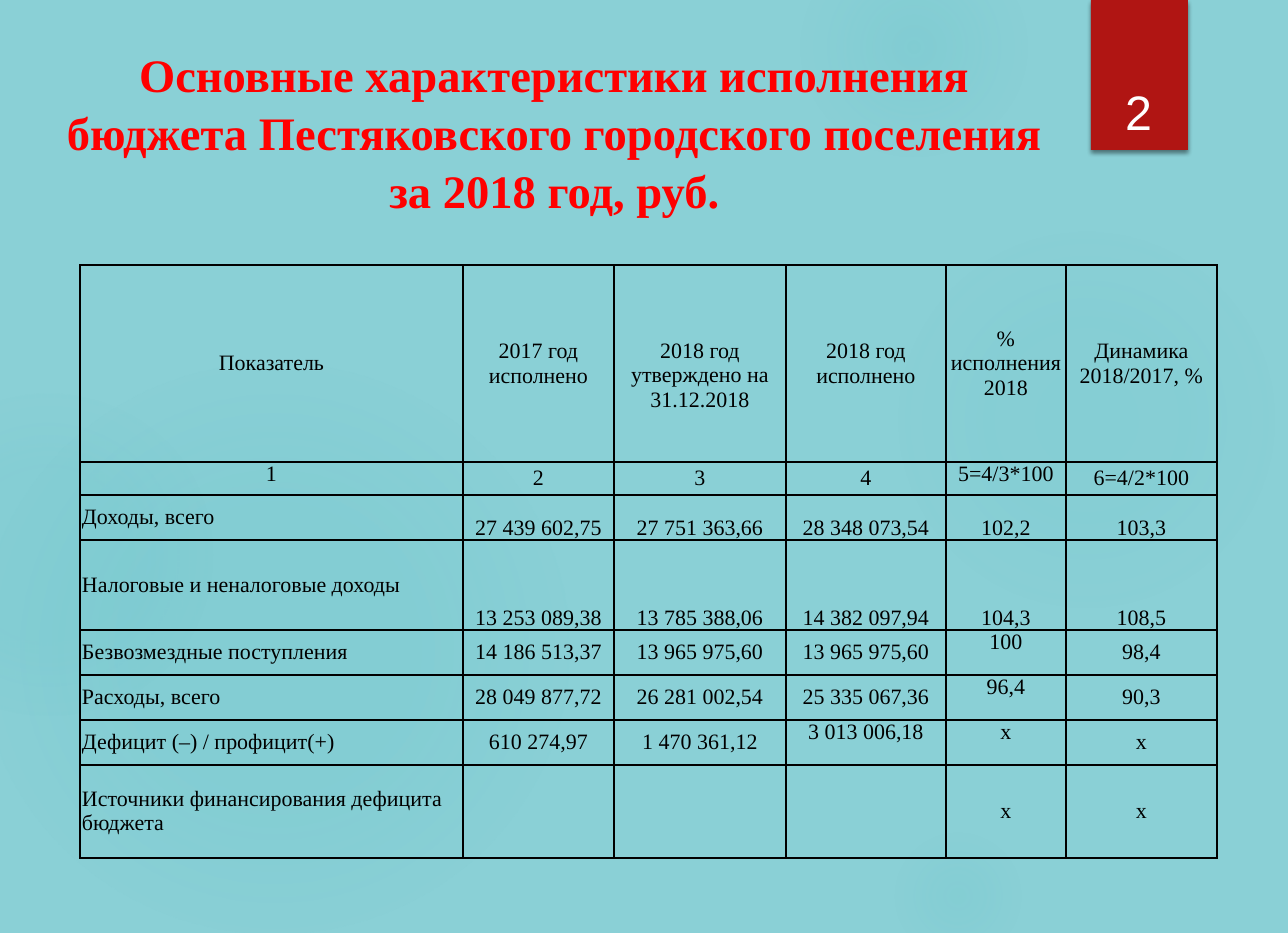
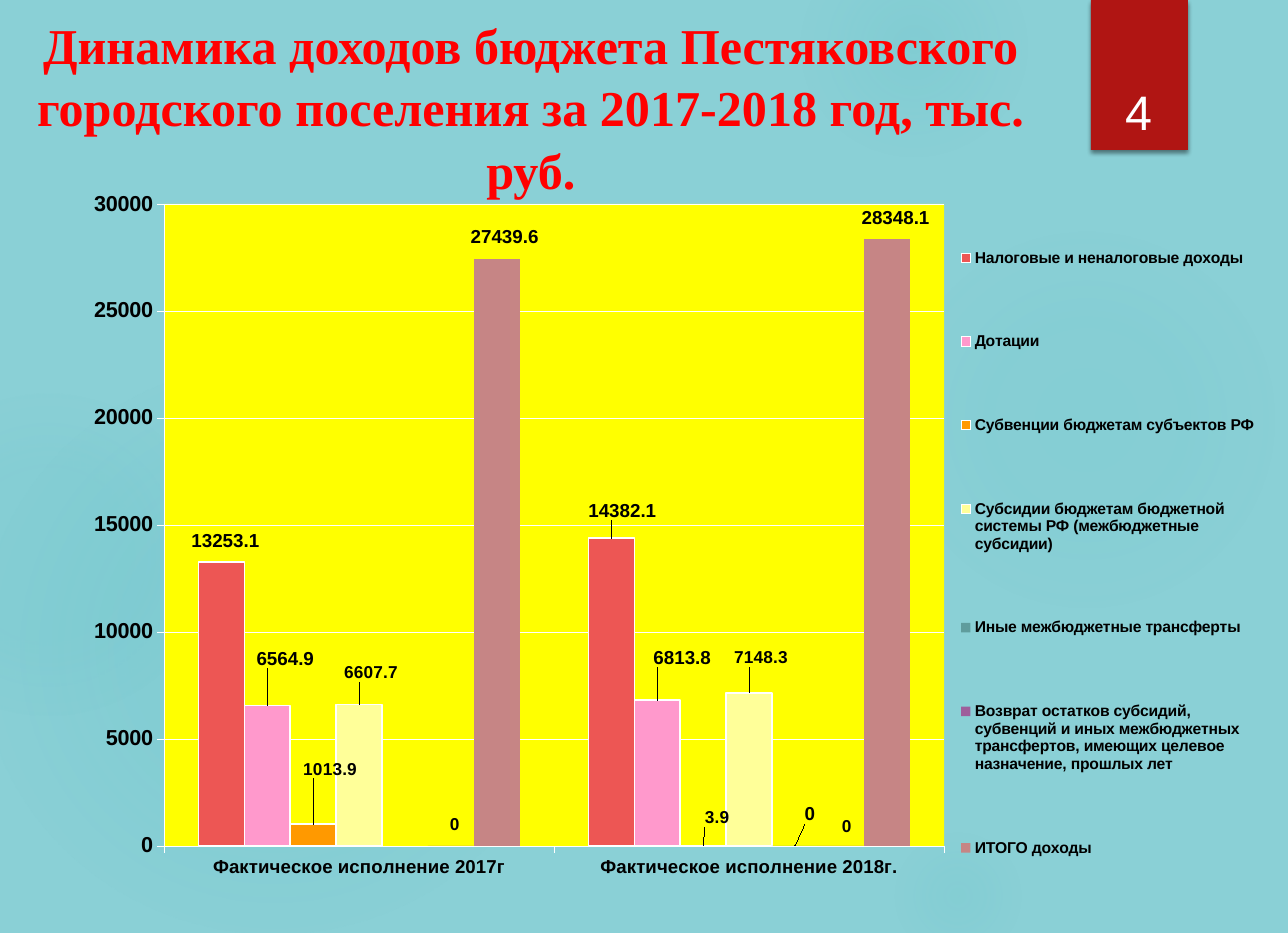
from dataclasses import dataclass

from lxml import etree
from pptx import Presentation
from pptx.chart.data import CategoryChartData
from pptx.dml.color import RGBColor
from pptx.enum.chart import XL_CHART_TYPE, XL_LABEL_POSITION, XL_LEGEND_POSITION, XL_TICK_MARK
from pptx.enum.shapes import MSO_SHAPE
from pptx.enum.text import MSO_ANCHOR, PP_ALIGN
from pptx.oxml import parse_xml
from pptx.oxml.ns import nsdecls, qn
from pptx.util import Emu, Pt

EMU_PER_PX = 8106
PAGE_WIDTH, PAGE_HEIGHT = 1288, 933
LEFT, CENTER = PP_ALIGN.LEFT, PP_ALIGN.CENTER
ANCHORS = {"t": MSO_ANCHOR.TOP, "m": MSO_ANCHOR.MIDDLE, "b": MSO_ANCHOR.BOTTOM}
OVAL, RECTANGLE = MSO_SHAPE.OVAL, MSO_SHAPE.RECTANGLE
COLUMN_CHART = XL_CHART_TYPE.COLUMN_CLUSTERED
OUTSIDE_END = XL_LABEL_POSITION.OUTSIDE_END
LEGEND_RIGHT = XL_LEGEND_POSITION.RIGHT
TICK_OUTSIDE = XL_TICK_MARK.OUTSIDE


@dataclass(frozen=True)
class Theme:
    background: str = "8AD0D6"
    glow: str = "50B9C1"
    band: str = "B01513"
    title: str = "FF0000"
    ink: str = "000000"
    white: str = "FFFFFF"
    plot: str = "FFFF00"
    serif: str = "Times New Roman"
    sans: str = "Arial"
    number_size: float = 30.9
    table_size: float = 14
    value_axis_size: float = 13.8
    category_axis_size: float = 11.9
    legend_size: float = 10
    thin_line: float = 0.25
    bar_line: float = 0.98
    border: float = 1


THEME = Theme()

GLOWS = [
    ((888, 228, 397, 384), ((0, 7), (36, 6), (69, 0))),
    ((801, -62, 226, 218), ((0, 14), (36, 7), (73, 0))),
    ((888, 829, 140, 134), ((0, 9), (36, 5), (66, 0))),
    ((-21, 363, 590, 570), ((0, 11), (36, 10), (75, 0))),
    ((-118, 394, 333, 321), ((0, 8), (36, 8), (72, 0))),
]

COLUMN_WIDTHS = [383, 151, 172, 160, 120, 151]
BUDGET_ROWS = [
    (197, "mmmmmm", ["Показатель", "2017 год\nисполнено", "2018 год\nутверждено на 31.12.2018",
                     "2018 год\nисполнено", "% исполнения 2018", "Динамика 2018/2017, %"]),
    (33, "tmmmtm", ["1", "2", "3", "4", "5=4/3*100", "6=4/2*100"]),
    (45, "mbbbbb", ["Доходы, всего", "27 439 602,75", "27 751 363,66", "28 348 073,54",
                    "102,2", "103,3"]),
    (90, "mbbbbb", ["Налоговые и неналоговые доходы", "13 253 089,38", "13 785 388,06",
                    "14 382 097,94", "104,3", "108,5"]),
    (45, "mmmmtm", ["Безвозмездные поступления", "14 186 513,37", "13 965 975,60",
                    "13 965 975,60", "100", "98,4"]),
    (45, "mmmmtm", ["Расходы, всего", "28 049 877,72", "26 281 002,54", "25 335 067,36",
                    "96,4", "90,3"]),
    (45, "mmmttm", ["Дефицит (–) / профицит(+)", "610 274,97", "1 470 361,12",
                    "3 013 006,18", "х", "х"]),
    (93, "mmmmmm", ["Источники финансирования дефицита бюджета", "", "", "", "х", "х"]),
]
APPROVED_HEADER = (0, 2)

INCOME_YEARS = ["Фактическое исполнение 2017г", "Фактическое исполнение 2018г."]
INCOME_SERIES = [
    ("Налоговые и неналоговые доходы", (13253.1, 14382.1), "ED5654", True, 12,
     ((4, -7), (11, -13))),
    ("Дотации", (6564.9, 6813.8), "FF99CC", True, 12, ((18, -32), (25, -28))),
    ("Субвенции бюджетам субъектов РФ", (1013.9, 3.9), "FF9900", True, 11,
     ((17, -41), (14, -14))),
    ("Субсидии бюджетам бюджетной системы РФ (межбюджетные субсидии)", (6607.7, 7148.3),
     "FFFF99", True, 11, ((12, -18), (12, -21))),
    ("Иные межбюджетные трансферты", (None, 0), "5F9C9D", False, 12, ((0, 0), (15, -17))),
    ("Возврат остатков субсидий, субвенций и иных межбюджетных трансфертов, "
     "имеющих целевое назначение, прошлых лет", (0, 0), "9E5E9B", False, 11,
     ((4, -7), (6, -5))),
    ("ИТОГО доходы", (27439.6, 28348.1), "C68585", False, 12, ((8, -7), (9, -7))),
]


def px(length):
    return Emu(length * EMU_PER_PX)


def rgb(color):
    return RGBColor.from_string(color)


def style_font(font, size, color, name, bold):
    font.size = Pt(size)
    font.name = name
    font.bold = bold
    font.color.rgb = rgb(color)


def write_text(frame, text, *, size, color, name, bold=False, align=CENTER, spacing=None):
    for index, line in enumerate(text.split("\n")):
        para = frame.paragraphs[0] if index == 0 else frame.add_paragraph()
        para.alignment = align
        para.line_spacing = spacing
        style_font(para.font, size, color, name, bold)
        if line:
            span = para.add_run()
            span.text = line
            style_font(span.font, size, color, name, bold)


def set_layout(parent, index, left, top, width=None, height=None, inner=False):
    for old in parent.findall(qn("c:layout")):
        parent.remove(old)
    layout = parse_xml(f"<c:layout {nsdecls('c')}><c:manualLayout/></c:layout>")
    entries = [("x", left), ("y", top)]
    if width is not None:
        entries = [("xMode", "edge"), ("yMode", "edge"), *entries, ("w", width), ("h", height)]
    if inner:
        entries.insert(0, ("layoutTarget", "inner"))
    for tag, value in entries:
        text = value if isinstance(value, str) else f"{value:.4f}"
        etree.SubElement(layout[0], qn(f"c:{tag}")).set("val", text)
    parent.insert(index, layout)


class DeckBuilder:
    def __init__(self, theme):
        self.theme = theme
        self.deck = Presentation()
        self.deck.slide_width = px(PAGE_WIDTH)
        self.deck.slide_height = px(PAGE_HEIGHT)
        fill = self.deck.slide_master.background.fill
        fill.solid()
        fill.fore_color.rgb = rgb(theme.background)
        self.page = None

    def add_page(self, number, title, title_box, title_size):
        self.page = self.deck.slides.add_slide(self.deck.slide_layouts[6])
        for box, stops in GLOWS:
            self.add_glow(box, stops)
        self.add_shadow(self.add_shape(RECTANGLE, (1091, 0, 97, 150), self.theme.band))
        badge = self.add_shape(RECTANGLE, (1094, 41, 89, 105), self.theme.band)
        badge.text_frame.vertical_anchor = ANCHORS["b"]
        write_text(badge.text_frame, number, size=self.theme.number_size,
                   color=self.theme.white, name=self.theme.sans)
        self.add_title(title, title_box, title_size)

    def add_shape(self, kind, box, color=None):
        shape = self.page.shapes.add_shape(kind, *map(px, box))
        shape.shadow.inherit = False
        shape.line.fill.background()
        if color:
            shape.fill.solid()
            shape.fill.fore_color.rgb = rgb(color)
        return shape

    def add_glow(self, box, stops):
        shape = self.add_shape(OVAL, box)
        stop_xml = "".join(
            f'<a:gs pos="{position * 1000}"><a:srgbClr val="{self.theme.glow}">'
            f'<a:alpha val="{alpha * 1000}"/></a:srgbClr></a:gs>'
            for position, alpha in stops)
        gradient = parse_xml(
            f'<a:gradFill {nsdecls("a")} rotWithShape="1"><a:gsLst>{stop_xml}</a:gsLst>'
            '<a:path path="circle"><a:fillToRect l="50000" t="50000" r="50000" b="50000"/>'
            '</a:path></a:gradFill>')
        shape.element.spPr.find(qn("a:prstGeom")).addnext(gradient)

    def add_shadow(self, shape):
        effects = shape.element.spPr.find(qn("a:effectLst"))
        effects.append(parse_xml(
            f'<a:outerShdw {nsdecls("a")} blurRad="{Pt(3)}" dist="{Pt(2)}" dir="5400000" '
            'rotWithShape="0"><a:srgbClr val="000000"><a:alpha val="45000"/></a:srgbClr>'
            '</a:outerShdw>'))

    def add_title(self, text, box, size):
        frame = self.page.shapes.add_textbox(*map(px, box)).text_frame
        frame.word_wrap = True
        write_text(frame, text, size=size, color=self.theme.title, name=self.theme.serif,
                   bold=True, spacing=1.04)

    def add_table(self, left, top, widths, rows):
        heights = [row[0] for row in rows]
        frame = self.page.shapes.add_table(len(rows), len(widths), px(left), px(top),
                                           px(sum(widths)), px(sum(heights)))
        table = frame.table
        table.first_row = table.horz_banding = False
        for column, width in zip(table.columns, widths):
            column.width = px(width)
        for row_index, (height, anchors, texts) in enumerate(rows):
            table.rows[row_index].height = px(height)
            for column_index, text in enumerate(texts):
                cell = table.cell(row_index, column_index)
                body_label = column_index == 0 and row_index > 1
                self.fill_cell(cell, text, anchors[column_index], LEFT if body_label else CENTER)
        return table

    def fill_cell(self, cell, text, anchor, align):
        cell.margin_left = cell.margin_right = px(2)
        cell.margin_top = cell.margin_bottom = 0
        cell.vertical_anchor = ANCHORS[anchor]
        write_text(cell.text_frame, text, size=self.theme.table_size, color=self.theme.ink,
                   name=self.theme.serif, align=align)
        properties = cell._tc.get_or_add_tcPr()
        for side in "LRTB":
            properties.append(parse_xml(
                f'<a:ln{side} {nsdecls("a")} w="{Pt(self.theme.border)}"><a:solidFill>'
                f'<a:srgbClr val="{self.theme.ink}"/></a:solidFill></a:ln{side}>'))
        cell.fill.background()

    def style_axis(self, axis, size):
        axis.major_tick_mark = TICK_OUTSIDE
        self.style_line(axis.format.line, self.theme.thin_line)
        style_font(axis.tick_labels.font, size, self.theme.ink, self.theme.sans, True)

    def style_line(self, line, width):
        line.width = Pt(width)
        line.color.rgb = rgb(self.theme.white)

    def add_chart(self, box, categories, series_rows):
        data = CategoryChartData()
        data.categories = categories
        for name, values, *_ in series_rows:
            data.add_series(name, values)
        chart = self.page.shapes.add_chart(COLUMN_CHART, *map(px, box), data).chart
        width, height = box[2:]
        chart.has_title = False
        style_font(chart.font, self.theme.legend_size, self.theme.ink, self.theme.sans, True)
        self.style_axis(chart.category_axis, self.theme.category_axis_size)
        axis = chart.value_axis
        self.style_axis(axis, self.theme.value_axis_size)
        axis.minimum_scale, axis.maximum_scale, axis.major_unit = 0, 30000, 5000
        self.style_line(axis.major_gridlines.format.line, self.theme.thin_line)
        plot = chart.plots[0]
        plot.gap_width, plot.overlap, plot.vary_by_categories = 150, 0, False
        for series, row in zip(plot.series, series_rows):
            self.style_series(series, row, width, height)

        area = chart._chartSpace.xpath("c:chart/c:plotArea")[0]
        set_layout(area, 0, 164 / width, 26 / height, 780 / width, 642 / height, inner=True)
        area.append(parse_xml(
            f'<c:spPr {nsdecls("c", "a")}><a:solidFill><a:srgbClr val="{self.theme.plot}"/>'
            '</a:solidFill></c:spPr>'))
        chart.has_legend = True
        legend = chart.legend
        legend.position = LEGEND_RIGHT
        legend.include_in_layout = False
        style_font(legend.font, self.theme.legend_size, self.theme.ink, self.theme.sans, True)
        set_layout(legend._element, 1, 955 / width, 5 / height, 305 / width, 740 / height)

    def style_series(self, series, row, width, height):
        _, values, color, outlined, size, shifts = row
        series.invert_if_negative = False
        series.format.fill.solid()
        series.format.fill.fore_color.rgb = rgb(color)
        if outlined:
            self.style_line(series.format.line, self.theme.bar_line)
        else:
            series.format.line.fill.background()
        for index, (value, shift) in enumerate(zip(values, shifts)):
            if value is None:
                continue
            label = series.points[index].data_label
            style_font(label.font, size, self.theme.ink, self.theme.sans, True)
            label.position = OUTSIDE_END
            element = series._element.xpath(f"c:dLbls/c:dLbl[c:idx/@val='{index}']")[0]
            set_layout(element, 1, shift[0] / width, shift[1] / height)


def main():
    builder = DeckBuilder(THEME)
    builder.add_page("2", "Основные характеристики исполнения бюджета Пестяковского "
                     "городского поселения за 2018 год, руб.", (38, 38, 1033, 193), 29.7)
    table = builder.add_table(80, 265, COLUMN_WIDTHS, BUDGET_ROWS)
    table.cell(*APPROVED_HEADER).margin_top = px(24)

    builder.add_page("4", "Динамика доходов бюджета Пестяковского городского поселения "
                     "за 2017-2018 год, тыс. руб.", (10, 6, 1042, 204), 32)
    builder.add_chart((0, 178, 1262, 764), INCOME_YEARS, INCOME_SERIES)
    builder.deck.save("out.pptx")


if __name__ == "__main__":
    main()
